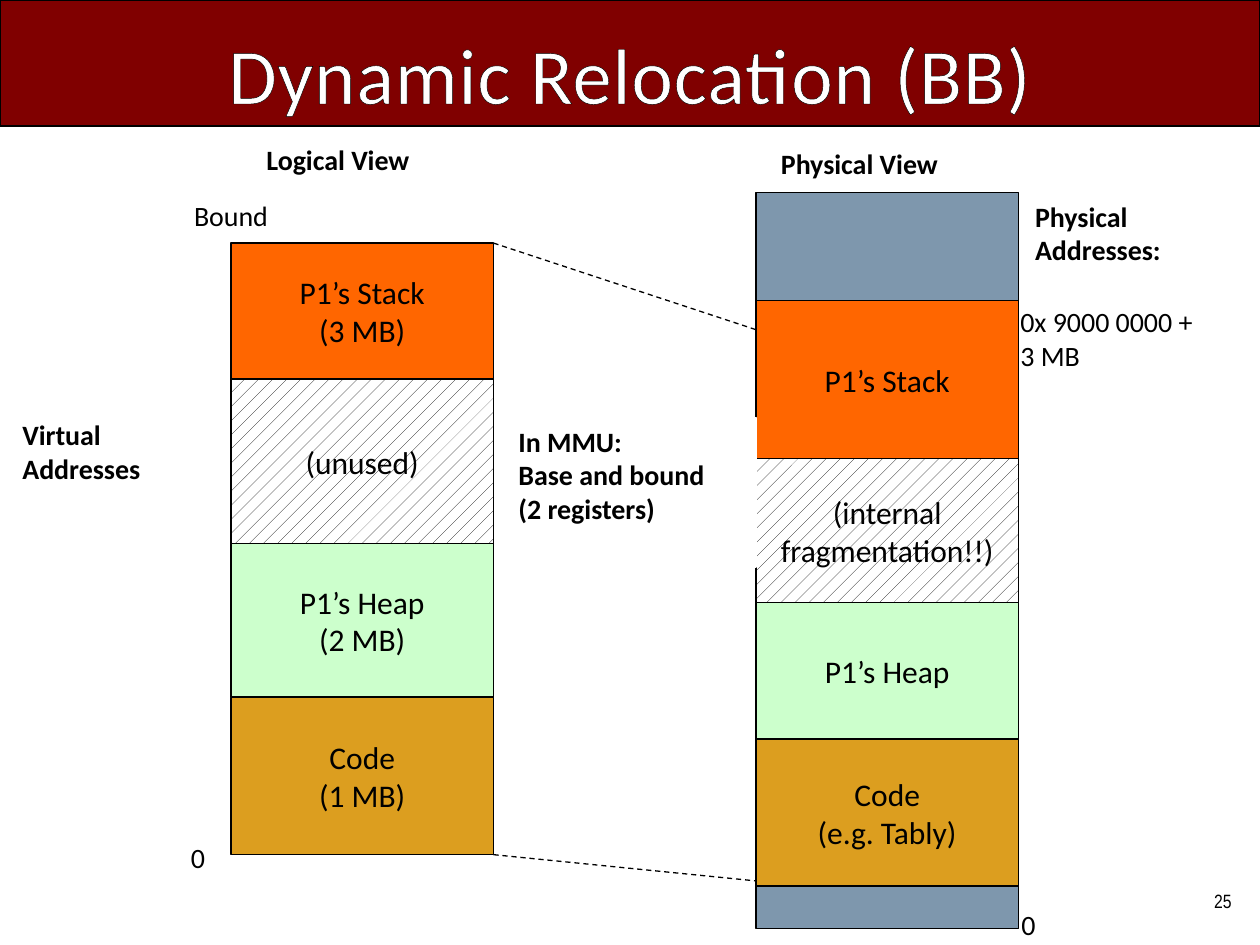
from lxml import etree
from pptx import Presentation
from pptx.dml.color import RGBColor
from pptx.enum.dml import MSO_LINE, MSO_PATTERN
from pptx.enum.shapes import MSO_CONNECTOR, MSO_SHAPE
from pptx.enum.text import MSO_ANCHOR, PP_ALIGN
from pptx.oxml.ns import qn
from pptx.util import Inches, Pt

RECT = MSO_SHAPE.RECTANGLE
STRAIGHT = MSO_CONNECTOR.STRAIGHT
DASH = MSO_LINE.DASH
DOTS = MSO_PATTERN.PERCENT_10
LEFT, MID, RIGHT = PP_ALIGN.LEFT, PP_ALIGN.CENTER, PP_ALIGN.RIGHT
TOP, CENTER, BOTTOM = MSO_ANCHOR.TOP, MSO_ANCHOR.MIDDLE, MSO_ANCHOR.BOTTOM
BLACK = RGBColor(0x00, 0x00, 0x00)
WHITE = RGBColor(0xFF, 0xFF, 0xFF)
MAROON = RGBColor(0x80, 0x00, 0x00)
SLATE = RGBColor(0x7E, 0x97, 0xAD)
ORANGE = RGBColor(0xFF, 0x66, 0x00)
GREEN = RGBColor(0xCC, 0xFF, 0xCC)
GOLD = RGBColor(0xDC, 0x9E, 0x1F)
HATCH = "hatch"

deck = Presentation()
deck.slide_width, deck.slide_height = Inches(10), Inches(7.5)
slide = deck.slides.add_slide(deck.slide_layouts[6])
shapes = slide.shapes

# The slide is a grid of 120 columns by 90 rows.
UNIT = deck.slide_width / 120


def grid(*cells):
    """Turn grid counts into lengths."""
    return [round(n * UNIT) for n in cells]


def block(text, at, fill=None, line=BLACK, size=18, font="Calibri",
          color=BLACK, bold=False, align=MID, anchor=CENTER):
    """Add a rectangle with one paragraph for each line of text."""
    box = shapes.add_shape(RECT, *grid(*at))
    box.shadow.inherit = False
    if fill is None:
        box.fill.background()
    elif fill == HATCH:
        box.fill.patterned()
        box.fill.pattern = DOTS
        box.fill.fore_color.rgb = BLACK
        box.fill.back_color.rgb = WHITE
    else:
        box.fill.solid()
        box.fill.fore_color.rgb = fill
    if line is None:
        box.line.fill.background()
    else:
        box.line.color.rgb = line
        box.line.width = Pt(0.75)
    frame = box.text_frame
    frame.word_wrap = True
    frame.vertical_anchor = anchor
    if text:
        for i, words in enumerate(text.split("\n")):
            para = frame.add_paragraph() if i else frame.paragraphs[0]
            para.alignment = align
            run = para.add_run()
            run.text = words
            run.font.size, run.font.name = Pt(size), font
            run.font.bold, run.font.color.rgb = bold, color
    return box


# Title bar, with outlined and slightly spaced letters
title = block("Dynamic Relocation (BB)", (0, 0, 120, 12), fill=MAROON,
              size=45, color=WHITE, anchor=BOTTOM)
props = title.text_frame.paragraphs[0].runs[0].font._element
props.set("spc", "50")
edge = etree.Element(qn("a:ln"), w="12700")
ink = etree.SubElement(edge, qn("a:solidFill"))
etree.SubElement(ink, qn("a:srgbClr"), val=str(BLACK))
props.insert(0, edge)

block("25", (105.5, 83.4, 13, 4.8), line=None, size=11,
      font="Arial Narrow", align=RIGHT)

# Memory columns: each part runs from its own top to the next one's
WIDE = 25
LOGIC, PHYS = 22, 72
block("", (PHYS, 18.33, WIDE, 70.08), fill=SLATE)
stacks = [
    (LOGIC, [23.15, 36.1, 51.8, 66.4, 81.4],
     ["P1’s Stack\n(3 MB)", "(unused)", "P1’s Heap\n(2 MB)", "Code\n(1 MB)"]),
    (PHYS, [28.65, 43.7, 57.4, 70.4, 84.4],
     ["P1’s Stack", "(internal\nfragmentation!!)", "P1’s Heap",
      "Code\n(e.g. Tably)"]),
]
for left, edges, names in stacks:
    for name, top, end, fill in zip(names, edges, edges[1:],
                                    [ORANGE, HATCH, GREEN, GOLD]):
        block(name, (left, top, WIDE, end - top), fill=fill)

# Dashed lines from the logical column to the physical one
for start, end in [(23.15, 31.4), (81.4, 83.9)]:
    link = shapes.add_connector(STRAIGHT,
                                *grid(LOGIC + WIDE, start, PHYS, end))
    link.line.color.rgb = BLACK
    link.line.width = Pt(0.75)
    link.line.dash_style = DASH
    etree.SubElement(link._element.spPr, qn("a:effectLst"))

# Labels: text, place, bold, outline
labels = [
    ("0", (17, 79.45, 3.8, 4.4), False, WHITE),
    ("0", (96.1, 85.8, 3.8, 4.4), False, None),
    ("0x 9000 0000 +\n3 MB", (96, 28.45, 19.7, 7.7), False, None),
    ("Physical\nAddresses:", (97.4, 18.4, 17.2, 7.7), True, WHITE),
    ("Virtual\nAddresses", (0.95, 39.2, 20.8, 7.7), True, WHITE),
    ("Bound", (17.3, 18.35, 9.7, 4.4), False, WHITE),
    ("Logical View", (24.2, 13, 22.8, 4.4), True, WHITE),
    ("Physical View", (73.2, 13.35, 22.8, 4.4), True, WHITE),
    ("In MMU:\nBase and bound\n(2 registers)", (48.2, 39.8, 23.8, 14.2),
     True, WHITE),
]
for text, at, bold, line in labels:
    block(text, at, line=line, size=16, bold=bold, align=LEFT, anchor=TOP)

deck.save("out.pptx")
